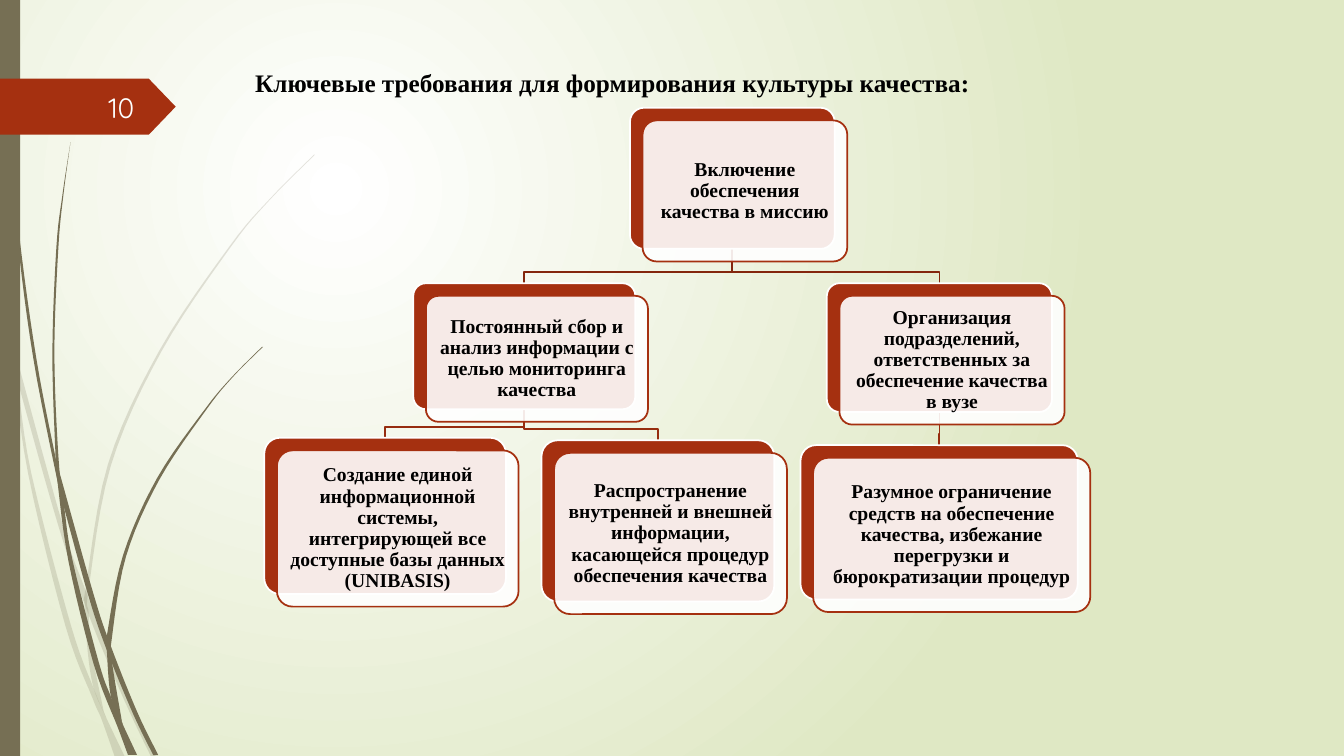
"""Build the slide on key requirements for a culture of quality."""
from dataclasses import dataclass

from lxml import etree
from pptx import Presentation
from pptx.dml.color import RGBColor
from pptx.enum.shapes import MSO_SHAPE
from pptx.enum.text import MSO_ANCHOR, MSO_AUTO_SIZE, PP_ALIGN
from pptx.oxml.ns import qn
from pptx.util import Pt

RECTANGLE, ROUNDED, TAG = MSO_SHAPE.RECTANGLE, MSO_SHAPE.ROUNDED_RECTANGLE, MSO_SHAPE.PENTAGON
TOP, MIDDLE = MSO_ANCHOR.TOP, MSO_ANCHOR.MIDDLE
LEFT, CENTER, RIGHT = PP_ALIGN.LEFT, PP_ALIGN.CENTER, PP_ALIGN.RIGHT
NO_FIT = MSO_AUTO_SIZE.NONE
TITLE_ONLY = 5


@dataclass(frozen=True)
class Theme:
    """Colours, fonts and sizes of the slide."""
    accent: str = "A53010"
    branch: str = "962C0F"
    trunk: str = "84260D"
    stem: str = "766F54"
    paper: str = "FFFFFF"
    meadow: str = "DFE8C4"
    ink: str = "000000"
    number_ink: str = "FEFFFF"
    text_font: str = "Times New Roman"
    number_font: str = "Quicksand"
    title_size: int = 18
    number_size: int = 20
    card_size: int = 14
    rule: float = 1.25


TITLE = "Ключевые требования для формирования культуры качества:"
CARDS = {
    "mission": (450, 77, 146.2, 100.8, "Включение обеспечения качества в миссию"),
    "monitoring": (295.2, 202.3, 158.6, 90,
                   "Постоянный сбор и анализ информации с целью мониторинга качества"),
    "system": (188.8, 312.7, 172.6, 111.6,
               "Создание единой информационной системы, интегрирующей все доступные "
               "базы данных (UNIBASIS)"),
    "sharing": (386.8, 314.5, 166.3, 115.2,
                "Распространение внутренней и внешней информации, касающейся процедур "
                "обеспечения качества"),
    "units": (590.6, 202.3, 160.8, 92,
              "Организация подразделений, ответственных за обеспечение качества в вузе"),
    "limits": (571.8, 318, 198, 110.2,
               "Разумное ограничение средств на обеспечение качества, избежание перегрузки "
               "и бюрократизации процедур"),
}
LINKS = [("units", "limits"), ("mission", "units"), ("monitoring", "sharing"),
         ("monitoring", "system"), ("mission", "monitoring")]
CARD_SHIFT = 9
BEND_GAP = 7.8
GRASS_UNIT = 0.72
PALE_GRASS = [
    ([(0, 282), (9, 322), (14, 345), (62, 520), (85, 586), (127, 692), (155, 751)],
     [(150, 751), (123, 694), (88, 610), (58, 522), (17, 376), (10, 344), (0, 299)]),
    ([(11, 350), (28, 470), (65, 621), (92, 693), (101, 714), (114, 751)],
     [(124, 751), (105, 711), (93, 683), (70, 619), (31, 469), (17, 376), (11, 350)]),
    ([(312, 153), (268, 197), (228, 244), (158, 348), (107, 461), (85, 584), (84, 599),
      (87, 646), (93, 683), (105, 711)],
     [(103, 706), (91, 646), (88, 608), (88, 584), (110, 462), (160, 349), (229, 245),
      (268, 198), (312, 154)]),
]
DARK_GRASS = [
    ([(3, 0), (4, 48), (7, 110), (17, 233), (33, 355), (57, 477), (64, 505), (88, 592),
      (106, 645), (132, 708), (152, 749)],
     [(157, 749), (136, 706), (110, 641), (93, 590), (60, 472), (55, 453), (36, 355),
      (19, 232), (8, 109), (5, 48), (4, 0)]),
    ([(70, 141), (62, 193), (56, 245), (52, 349), (55, 449), (57, 477), (68, 557),
      (93, 659), (117, 722), (127, 749)],
     [(136, 749), (122, 719), (110, 691), (98, 657), (72, 556), (64, 505), (58, 453),
      (54, 349), (58, 245), (63, 193), (70, 141)]),
    ([(260, 344), (231, 373), (204, 405), (156, 474), (122, 551), (106, 631), (106, 645),
      (110, 691), (122, 719)],
     [(121, 716), (111, 656), (111, 633), (125, 552), (158, 476), (205, 406), (231, 374),
      (261, 344)]),
]


def smooth_edge(knots, steps=6):
    """Return points in pt on a smooth curve through the knots."""
    padded = [knots[0], *knots, knots[-1]]
    points = []
    for a, b, c, d in zip(padded, padded[1:], padded[2:], padded[3:]):
        for t in (step / steps for step in range(steps)):
            points.append(tuple(
                GRASS_UNIT / 2 * (2 * q + (r - p) * t + (2 * p - 5 * q + 4 * r - s) * t ** 2
                                  + (3 * q - p - 3 * r + s) * t ** 3)
                for p, q, r, s in zip(a, b, c, d)))
    return points + [tuple(GRASS_UNIT * value for value in knots[-1])]


def assign(target, **formats):
    """Set every given attribute on the target."""
    for name, value in formats.items():
        setattr(target, name, value)


class Deck:
    """A presentation with its theme and current page."""

    def __init__(self, theme):
        """Open a wide deck with one page."""
        self.theme = theme
        self.file = Presentation()
        assign(self.file, slide_width=Pt(960), slide_height=Pt(540))
        self.page = self.file.slides.add_slide(self.file.slide_layouts[TITLE_ONLY])

    def backdrop(self, inner, outer):
        """Fill the page with a round gradient."""
        fill = self.page.background.fill
        fill.gradient()
        for stop, color in zip(fill.gradient_stops, (inner, outer)):
            stop.color.rgb = RGBColor.from_string(color)
        gradient = self.page._element.find(".//" + qn("a:gradFill"))
        gradient.remove(gradient.find(qn("a:lin")))
        circle = etree.SubElement(gradient, qn("a:path"), path="circle")
        etree.SubElement(circle, qn("a:fillToRect"), l="50000", t="50000", r="100000", b="100000")

    def paint(self, shape, fill=None, line=None, opacity=100):
        """Set the fill, line and opacity of a shape."""
        shape.shadow.inherit = False
        if fill:
            shape.fill.solid()
            shape.fill.fore_color.rgb = RGBColor.from_string(fill)
            if opacity < 100:
                color = shape._element.spPr.find(qn("a:solidFill"))[0]
                etree.SubElement(color, qn("a:alpha"), val=str(opacity * 1000))
        else:
            shape.fill.background()
        if line:
            shape.line.color.rgb = RGBColor.from_string(line)
            shape.line.width = Pt(self.theme.rule)
        else:
            shape.line.fill.background()

    def preset(self, kind, frame, adjust=None, **look):
        """Add a preset shape."""
        shape = self.page.shapes.add_shape(kind, *map(Pt, frame))
        if adjust is not None:
            shape.adjustments[0] = adjust
        self.paint(shape, **look)
        return shape

    def outline(self, points, close, **look):
        """Add a freeform through the points."""
        start, *rest = [tuple(map(Pt, point)) for point in points]
        builder = self.page.shapes.build_freeform(*start, scale=1.0)
        builder.add_line_segments(rest, close=close)
        self.paint(builder.convert_to_shape(), **look)

    def put_text(self, box, text, size, color, font, bold=True, anchor=MIDDLE, inset=None, **para_format):
        """Put one formatted paragraph into a box."""
        frame = box.text_frame
        assign(frame, word_wrap=True, auto_size=NO_FIT, vertical_anchor=anchor)
        if inset is not None:
            assign(frame, **{"margin_" + side: Pt(inset) for side in ("left", "top", "right", "bottom")})
        para = frame.paragraphs[0]
        assign(para, **para_format)
        span = para.add_run()
        span.text = text
        assign(span.font, size=Pt(size), name=font, bold=bold)
        span.font.color.rgb = RGBColor.from_string(color)

    def title(self, text, frame):
        """Move the title placeholder and fill it."""
        box = self.page.shapes.title
        assign(box, **dict(zip(("left", "top", "width", "height"), map(Pt, frame))))
        self.put_text(box, text, self.theme.title_size, self.theme.ink, self.theme.text_font,
                      anchor=TOP, alignment=LEFT, line_spacing=1.07)
        box.text_frame.paragraphs[0]._p.get_or_add_pPr().set("indent", str(Pt(35.4)))

    def number(self, text, frame):
        """Add the page number."""
        box = self.page.shapes.add_textbox(*map(Pt, frame))
        self.put_text(box, text, self.theme.number_size, self.theme.number_ink,
                      self.theme.number_font, bold=False, alignment=RIGHT)

    def link(self, parent, child, color):
        """Join a parent card to a child card below it."""
        start, end = parent[0] + parent[2] / 2, child[0] + child[2] / 2
        bend = child[1] - BEND_GAP
        self.outline([(start, parent[1] + parent[3]), (start, bend), (end, bend), (end, child[1])],
                     False, line=color)

    def card(self, left, top, width, height, text):
        """Add a red card with a pale text card over it."""
        theme = self.theme
        self.preset(ROUNDED, (left, top, width, height), 0.1, fill=theme.accent, line=theme.paper)
        front = self.preset(ROUNDED, (left + CARD_SHIFT, top + CARD_SHIFT, width, height), 0.1,
                            fill=theme.paper, line=theme.accent, opacity=90)
        self.put_text(front, text, theme.card_size, theme.ink, theme.text_font, inset=4.2,
                      alignment=CENTER, line_spacing=0.9, space_after=Pt(4.9))


def main():
    """Draw the page and save the deck."""
    theme = Theme()
    deck = Deck(theme)
    deck.backdrop(theme.paper, theme.meadow)
    for blades, opacity in ((PALE_GRASS, 20), (DARK_GRASS, 100)):
        for outer, inner in blades:
            deck.outline(smooth_edge(outer) + smooth_edge(inner), True, fill=theme.stem, opacity=opacity)
    deck.preset(RECTANGLE, (0, 0, 14.4, 540), fill=theme.stem)
    deck.preset(TAG, (0, 56.2, 125.5, 40), 0.48, fill=theme.accent)
    deck.number("10", (41.8, 62, 61.2, 28.8))
    for parent, child in LINKS:
        deck.link(CARDS[parent], CARDS[child], theme.trunk if parent == "mission" else theme.branch)
    for card in CARDS.values():
        deck.card(*card)
    deck.title(TITLE, (139.7, 43.2, 763.2, 30.2))
    deck.file.save("out.pptx")


if __name__ == "__main__":
    main()
